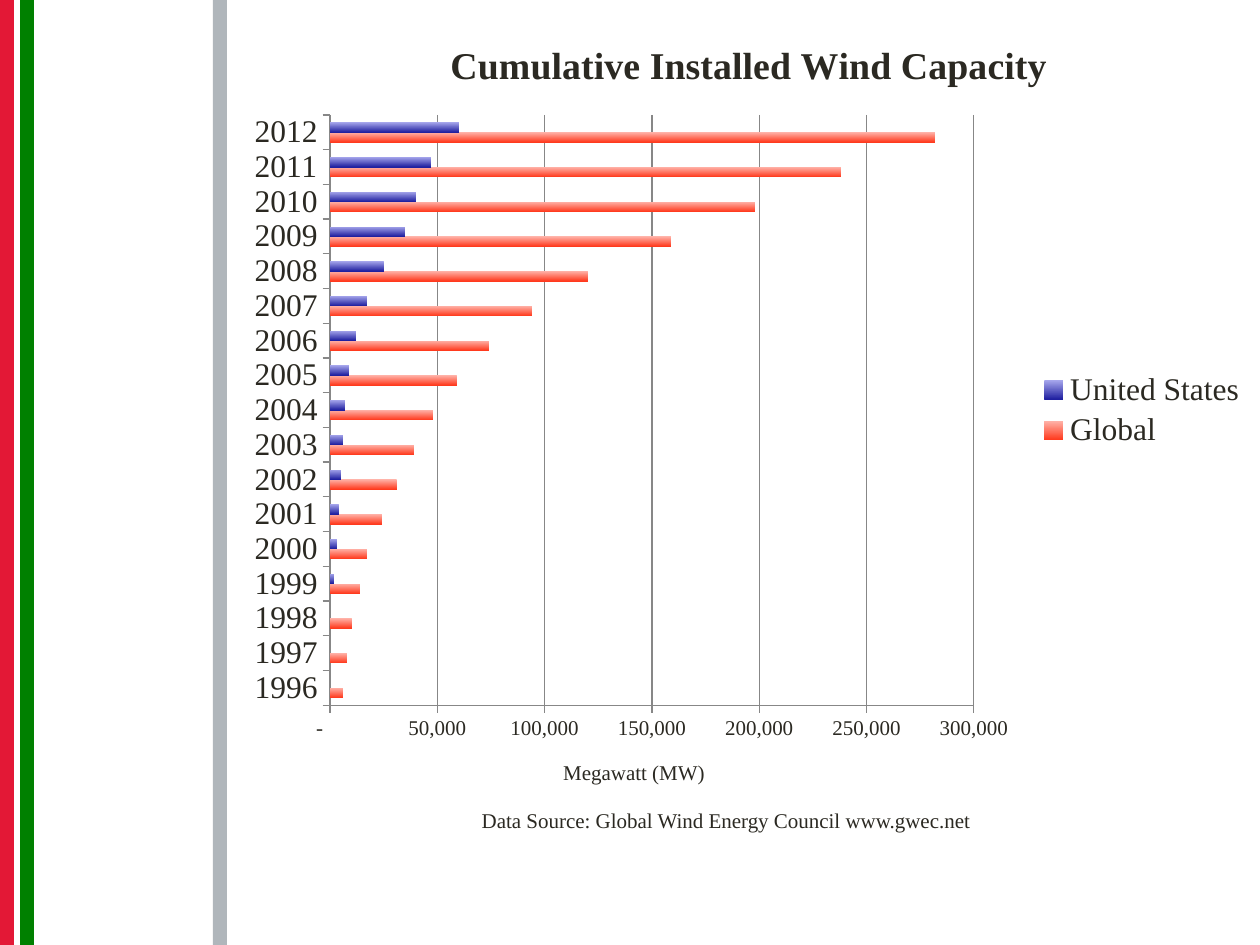
"""Build a slide with a bar chart of cumulative installed wind capacity."""
from dataclasses import dataclass

from lxml import etree
from pptx import Presentation
from pptx import util as u
from pptx.chart.data import CategoryChartData
from pptx.dml.color import RGBColor
from pptx.enum import chart as ch
from pptx.enum import shapes, text
from pptx.oxml import ns


@dataclass(frozen=True)
class Theme:
    """Colours and type sizes of the slide."""
    font: str = "Times New Roman"
    ink: str = "2B2922"
    grid: str = "878787"
    red: str = "E31836"
    green: str = "008000"
    grey: str = "B0B6BB"
    global_bars: tuple = ("FFB4AA", "FF3A1E")
    us_bars: tuple = ("A6A6EC", "2020A0")
    heading: float = 21.6
    label: float = 18
    small: float = 12


class Deck:
    """Hold the theme and the current slide."""

    def __init__(self, theme, width, height):
        """Start a presentation with one blank slide."""
        self.theme = theme
        self.prs = Presentation()
        self.prs.slide_width, self.prs.slide_height = u.Pt(width), u.Pt(height)
        self.slide = self.prs.slides.add_slide(self.prs.slide_layouts[6])

    def style(self, font, size, bold=False):
        """Apply the theme's typeface and ink to a font."""
        values = {"name": self.theme.font, "size": u.Pt(size), "bold": bold}
        for key, value in values.items():
            setattr(font, key, value)
        font.color.rgb = RGBColor.from_string(self.theme.ink)

    def stripe(self, left, color):
        """Add a full-height vertical stripe."""
        band = self.slide.shapes.add_shape(
            shapes.MSO_SHAPE.RECTANGLE, u.Pt(left), 0, u.Pt(7.92), self.prs.slide_height)
        band.shadow.inherit = False
        band.fill.solid()
        band.fill.fore_color.rgb = RGBColor.from_string(color)
        band.line.fill.background()

    def caption(self, wording, box):
        """Add a centred line of small text."""
        frame = self.slide.shapes.add_textbox(*map(u.Pt, box)).text_frame
        frame.word_wrap = True
        line = frame.paragraphs[0]
        line.text = wording
        line.alignment = text.PP_ALIGN.CENTER
        self.style(line.font, self.theme.small)

    def heading(self, owner, wording, size, bold):
        """Title a chart or an axis."""
        frame = owner.text_frame
        frame.text = wording
        self.style(frame.paragraphs[0].runs[0].font, size, bold)

    def bar_chart(self, title, unit, years, series, box, plot_area):
        """Add a clustered bar chart with gradient bars."""
        data = CategoryChartData()
        data.categories = years
        for name, values, _ in series:
            data.add_series(name, values)
        chart = self.slide.shapes.add_chart(
            ch.XL_CHART_TYPE.BAR_CLUSTERED, *map(u.Pt, box), data).chart
        self.style(chart.font, self.theme.label)
        self.heading(chart.chart_title, title, self.theme.heading, True)
        chart.chart_title.include_in_layout = False
        chart.has_legend = True
        chart.legend.position = ch.XL_LEGEND_POSITION.RIGHT
        chart.legend.include_in_layout = False
        self.bars(chart.plots[0], [colors for _, _, colors in series])
        self.axes(chart, unit)
        self.place_plot(chart, plot_area)

    def bars(self, plot, gradients):
        """Colour each series from light at the top to dark below."""
        plot.gap_width, plot.overlap, plot.vary_by_categories = 150, 0, False
        for bar, colors in zip(plot.series, gradients):
            bar.invert_if_negative = False
            bar.format.fill.gradient()
            bar.format.fill.gradient_angle = 270
            for stop, color in zip(bar.format.fill.gradient_stops, colors):
                stop.color.rgb = RGBColor.from_string(color)

    def axes(self, chart, unit):
        """Format both axes and the grid."""
        years, capacity = chart.category_axis, chart.value_axis
        scale = {"minimum_scale": 0, "maximum_scale": 300000, "major_unit": 50000,
                 "has_major_gridlines": True}
        for key, value in scale.items():
            setattr(capacity, key, value)
        years.has_major_gridlines = False
        for axis, size in ((years, self.theme.label), (capacity, self.theme.small)):
            axis.major_tick_mark = ch.XL_TICK_MARK.OUTSIDE
            self.style(axis.tick_labels.font, size)
        for part in (years, capacity, capacity.major_gridlines):
            part.format.line.color.rgb = RGBColor.from_string(self.theme.grid)
            part.format.line.width = u.Pt(0.75)
        labels = capacity.tick_labels
        labels.number_format = '_(* #,##0_);_(* \\(#,##0\\);_(* "-"??_);_('
        labels.number_format_is_linked = False
        self.heading(capacity.axis_title, unit, self.theme.small, False)

    def place_plot(self, chart, fractions):
        """Fix the inner plot area as fractions of the chart."""
        area = chart.plots[0]._element.getparent()
        for old in area.findall(ns.qn("c:layout")):
            area.remove(old)
        layout = etree.Element(ns.qn("c:layout"))
        manual = etree.SubElement(layout, ns.qn("c:manualLayout"))
        values = {"layoutTarget": "inner", "xMode": "edge", "yMode": "edge",
                  **dict(zip("xywh", fractions))}
        for key, value in values.items():
            etree.SubElement(manual, ns.qn("c:" + key)).set("val", str(value))
        area.insert(0, layout)


def main():
    """Compose the slide and save it."""
    theme = Theme()
    deck = Deck(theme, 720, 540)
    for left, color in ((0, theme.red), (11.5, theme.green), (121.7, theme.grey)):
        deck.stripe(left, color)
    deck.caption("Data Source: Global Wind Energy Council www.gwec.net",
                 (199.4, 457.9, 431.3, 21.6))
    worldwide = [6000, 8000, 10000, 14000, 17000, 24000, 31000, 39000, 48000, 59000,
                 74000, 94000, 120000, 159000, 198000, 238000, 282000]
    american = [None] * 3 + [2000, 3000, 4000, 5000, 6000, 7000, 9000, 12000, 17000,
                             25000, 35000, 40000, 47000, 60000]
    deck.bar_chart(
        "Cumulative Installed Wind Capacity", "Megawatt (MW)",
        [str(year) for year in range(1996, 2013)],
        [("Global", worldwide, theme.global_bars),
         ("United States", american, theme.us_bars)],
        (136.1, 6.5, 583.9, 455.8), (0.09, 0.13, 0.63, 0.74))
    deck.prs.save("out.pptx")


if __name__ == "__main__":
    main()
